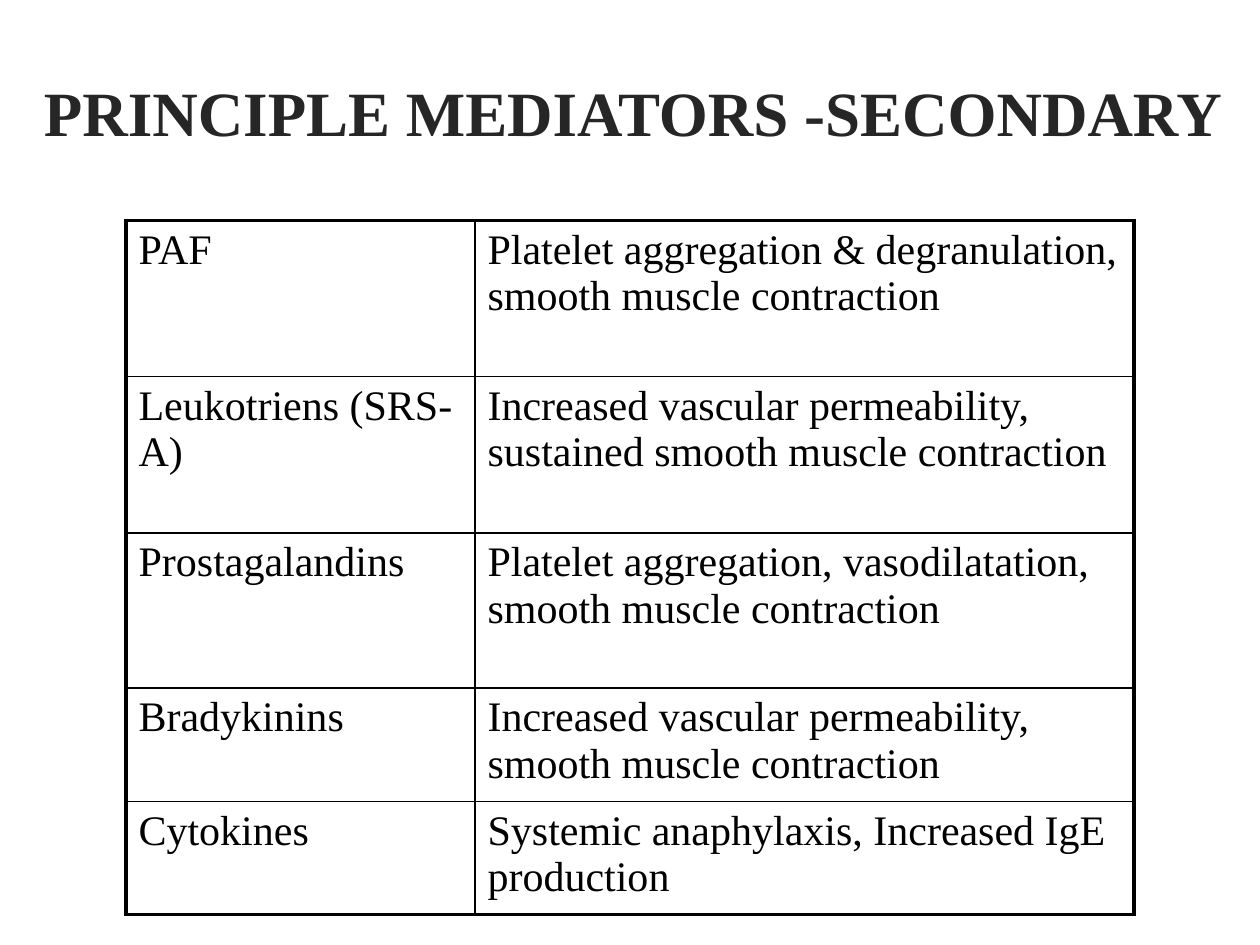
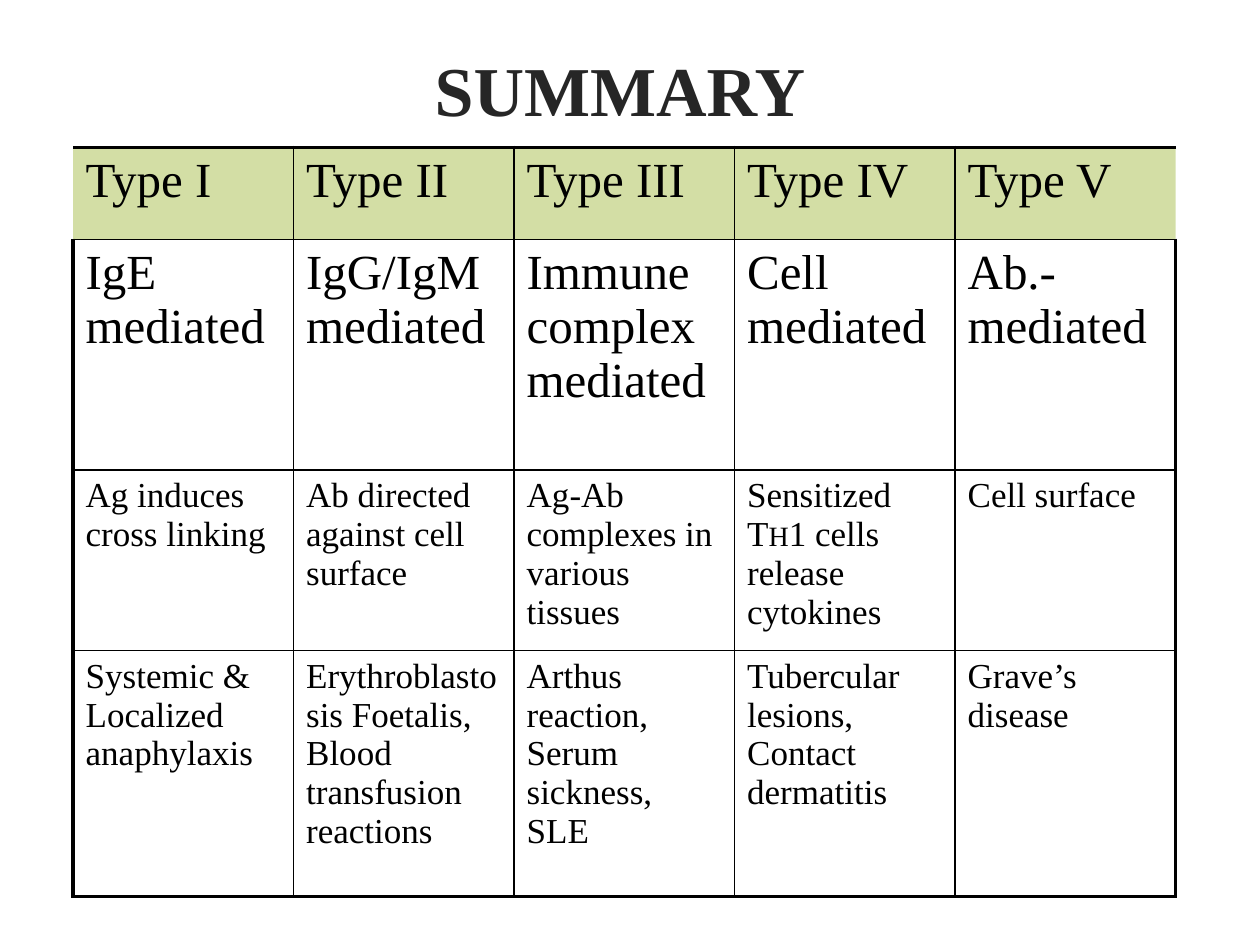
"""Build two slides of tables on hypersensitivity: secondary mediators and a summary of types."""
from dataclasses import dataclass

from lxml import etree
from pptx import Presentation
from pptx.dml.color import RGBColor
from pptx.enum.text import MSO_ANCHOR, PP_ALIGN
from pptx.oxml.ns import qn
from pptx.util import Pt

LEFT, CENTER = PP_ALIGN.LEFT, PP_ALIGN.CENTER
MIDDLE = MSO_ANCHOR.MIDDLE
PX = 9144


@dataclass(frozen=True)
class Theme:
    font: str = "Times New Roman"
    title: str = "262626"
    ink: str = "000000"
    header: str = "A8BF4D"
    header_alpha: int = 50000
    mediator_size: int = 24
    type_size: int = 28
    detail_size: int = 20
    subscript_size: int = 16
    outer_line: float = 2.25
    inner_line: float = 1


THEME = Theme()


def style_run(run, size, color, bold=False):
    run.font.name = THEME.font
    run.font.size = Pt(size)
    run.font.bold = bold
    run.font.color.rgb = RGBColor.from_string(color)


def draw_border(cell, side, width):
    line = etree.SubElement(cell._tc.get_or_add_tcPr(), qn(f"a:ln{side}"))
    if width is None:
        etree.SubElement(line, qn("a:noFill"))
        return
    line.set("w", str(Pt(width)))
    fill = etree.SubElement(line, qn("a:solidFill"))
    etree.SubElement(fill, qn("a:srgbClr"), val=THEME.ink)


pages = [
    {
        "title": "PRINCIPLE MEDIATORS -SECONDARY",
        "title_box": (25, 26, 1100, 125),
        "title_size": 36,
        "align": LEFT,
        "table_at": (100, 175),
        "columns": [277, 523],
        "heights": [124, 124, 123, 90, 90],
        "sizes": [THEME.mediator_size] * 5,
        "has_header": False,
        "rows": [
            ["PAF", "Platelet aggregation & degranulation, smooth muscle contraction"],
            ["Leukotriens (SRS-A)",
             "Increased vascular permeability, sustained smooth muscle contraction"],
            ["Prostagalandins",
             "Platelet aggregation, vasodilatation, smooth muscle contraction"],
            ["Bradykinins", "Increased vascular permeability, smooth muscle contraction"],
            ["Cytokines", "Systemic anaphylaxis, Increased IgE production"],
        ],
    },
    {
        "title": "SUMMARY",
        "title_box": (42, 8, 900, 125),
        "title_size": 40,
        "align": CENTER,
        "table_at": (58, 117),
        "columns": [175] * 5,
        "heights": [73, 183, 143, 195],
        "sizes": [THEME.type_size] * 2 + [THEME.detail_size] * 2,
        "has_header": True,
        "rows": [
            ["Type I", "Type II", "Type III", "Type IV", "Type V"],
            ["IgE mediated", "IgG/IgM mediated", "Immune complex mediated",
             "Cell mediated", "Ab.-mediated"],
            ["Ag induces cross linking", "Ab directed against cell surface",
             "Ag-Ab complexes in various tissues",
             "Sensitized T|H|1 cells release cytokines", "Cell surface"],
            ["Systemic & Localized anaphylaxis",
             "Erythroblastosis Foetalis, Blood transfusion reactions",
             "Arthus reaction, Serum sickness, SLE",
             "Tubercular lesions, Contact dermatitis", "Grave’s disease"],
        ],
    },
]

deck = Presentation()
deck.slide_width, deck.slide_height = 1000 * PX, 750 * PX

for page in pages:
    slide = deck.slides.add_slide(deck.slide_layouts[6])

    heading = slide.shapes.add_textbox(*(n * PX for n in page["title_box"])).text_frame
    heading.word_wrap = True
    heading.vertical_anchor = MIDDLE
    heading.text = page["title"]
    heading.paragraphs[0].alignment = page["align"]
    style_run(heading.paragraphs[0].runs[0], page["title_size"], THEME.title, bold=True)

    columns, heights = page["columns"], page["heights"]
    last_row, last_column = len(heights) - 1, len(columns) - 1
    left, top = page["table_at"]
    grid = slide.shapes.add_table(
        len(heights), len(columns), left * PX, top * PX,
        sum(columns) * PX, sum(heights) * PX).table
    grid.first_row = grid.horz_banding = False
    for column, width in zip(grid.columns, columns):
        column.width = width * PX
    for row, height in zip(grid.rows, heights):
        row.height = height * PX

    for r, (texts, size) in enumerate(zip(page["rows"], page["sizes"])):
        is_header = page["has_header"] and r == 0
        for c, text in enumerate(texts):
            cell = grid.cell(r, c)
            paragraph = cell.text_frame.paragraphs[0]
            for i, part in enumerate(text.split("|")):
                run = paragraph.add_run()
                run.text = part
                style_run(run, THEME.subscript_size if i % 2 else size, THEME.ink)

            side_line = None if is_header else THEME.outer_line
            edges = [("L", c == 0, side_line), ("R", c == last_column, side_line),
                     ("T", r == 0, THEME.outer_line),
                     ("B", r == last_row, THEME.outer_line)]
            for side, is_outer, outer_line in edges:
                draw_border(cell, side, outer_line if is_outer else THEME.inner_line)

            if is_header:
                cell.fill.solid()
                cell.fill.fore_color.rgb = RGBColor.from_string(THEME.header)
                tint = cell._tc.tcPr.find(f"{qn('a:solidFill')}/{qn('a:srgbClr')}")
                etree.SubElement(tint, qn("a:alpha"), val=str(THEME.header_alpha))
            else:
                cell.fill.background()

deck.save("out.pptx")
